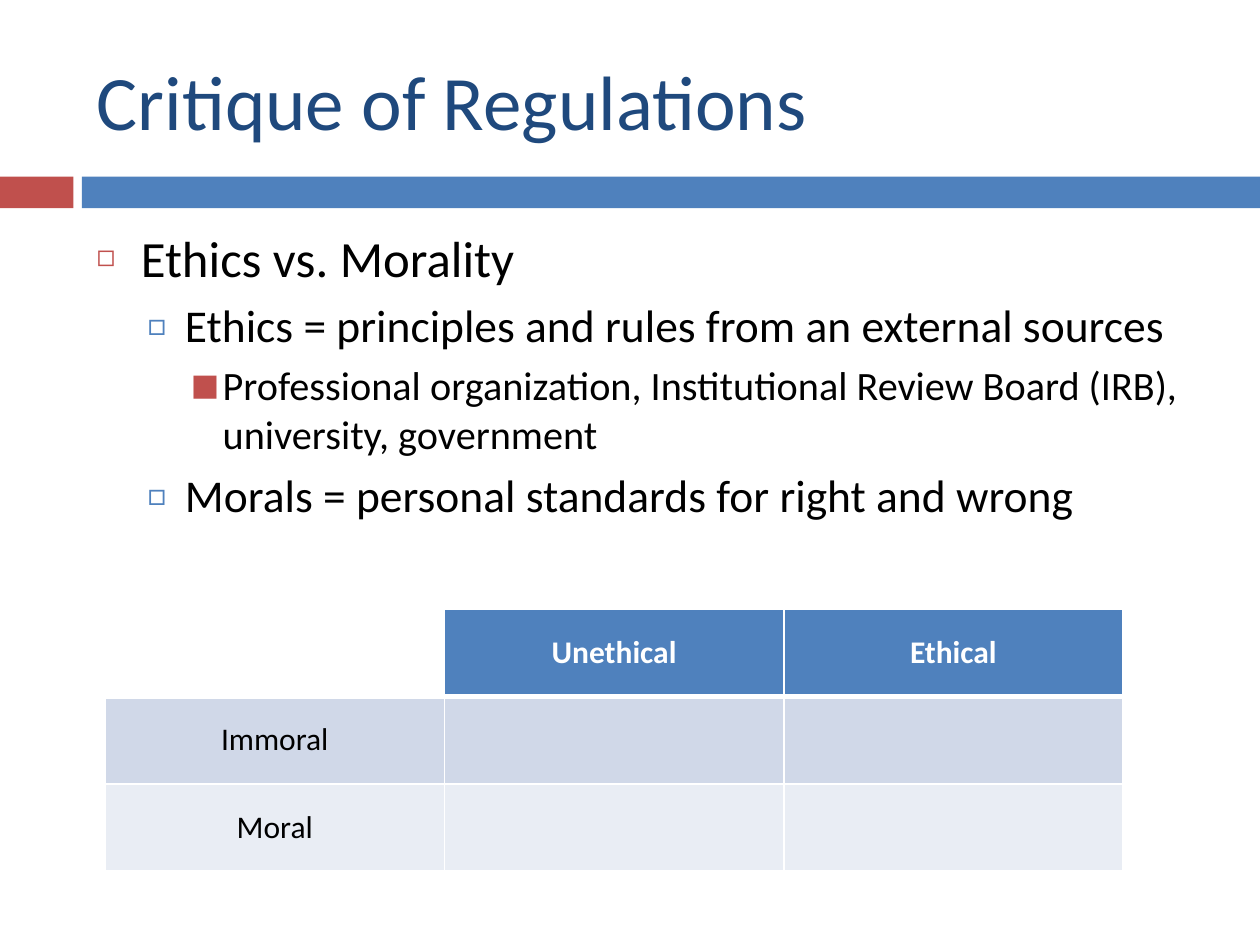
from lxml import etree
from pptx import Presentation
from pptx import util as u
from pptx.dml import color
from pptx.enum import shapes, text
from pptx.oxml import ns

FONT = "Calibri"
RED, BLUE, NAVY, BLACK, WHITE = "C0504D", "4F81BD", "1F497D", "000000", "FFFFFF"
LEVELS = [
    dict(size=29, left=0.89, hanging=0.89, before=7, bullet="◻", tint=RED, percent=60),
    dict(size=26, left=1.78, hanging=0.76, before=5.5, bullet="□", tint=BLUE, percent=70),
    dict(size=23, left=2.54, hanging=0.64, before=5, bullet="■", tint=RED, percent=75),
]
OUTLINE = [
    (0, "Ethics vs. Morality"),
    (1, "Ethics = principles and rules from an external sources"),
    (2, "Professional organization, Institutional Review Board (IRB), university, government"),
    (1, "Morals = personal standards for right and wrong"),
]
ROWS = [["", "Unethical", "Ethical"], ["Immoral", "", ""], ["Moral", "", ""]]
ROW_FILLS = [BLUE, "D0D8E8", "E9EDF4"]


def rgb(value):
    """Turn a hex string into a colour."""
    return color.RGBColor.from_string(value)


def add_element(parent, tag, **attributes):
    """Append a drawing element to a parent and return it."""
    element = etree.SubElement(parent, ns.qn("a:" + tag))
    for name, value in attributes.items():
        element.set(name, str(value))
    return element


def add_run(paragraph, content, size, tint, bold=False):
    """Add one formatted run to a paragraph."""
    run = paragraph.add_run()
    run.text = content
    run.font.name = FONT
    run.font.size = u.Pt(size)
    run.font.bold = bold
    run.font.color.rgb = rgb(tint)


def add_bar(slide, left, width, fill):
    """Add a plain block of the band under the title."""
    bar = slide.shapes.add_shape(
        shapes.MSO_SHAPE.RECTANGLE, u.Cm(left), u.Cm(3.56), u.Cm(width), u.Cm(0.64))
    bar.shadow.inherit = False
    bar.fill.solid()
    bar.fill.fore_color.rgb = rgb(fill)
    bar.line.fill.background()


def add_text_frame(slide, top, height, anchor):
    """Add a wrapping text box in the main column and return its frame."""
    box = slide.shapes.add_textbox(u.Cm(1.7), u.Cm(top), u.Cm(22.66), u.Cm(height))
    frame = box.text_frame
    frame.word_wrap = True
    frame.vertical_anchor = anchor
    return frame


def add_bullet(paragraph, style):
    """Give a paragraph the indent, spacing and bullet of its level."""
    paragraph.space_before = u.Pt(style["before"])
    properties = paragraph._p.get_or_add_pPr()
    properties.set("marL", str(u.Cm(style["left"])))
    properties.set("indent", str(-u.Cm(style["hanging"])))
    add_element(add_element(properties, "buClr"), "srgbClr", val=style["tint"])
    add_element(properties, "buSzPct", val=style["percent"] * 1000)
    add_element(properties, "buFont", typeface=FONT)
    add_element(properties, "buChar", char=style["bullet"])


def add_outline(slide):
    """Add the bulleted outline."""
    frame = add_text_frame(slide, 4.45, 6.78, text.MSO_ANCHOR.TOP)
    for index, (level, content) in enumerate(OUTLINE):
        paragraph = frame.add_paragraph() if index else frame.paragraphs[0]
        paragraph.level = level
        add_bullet(paragraph, LEVELS[level])
        add_run(paragraph, content, LEVELS[level]["size"], BLACK)


def format_cell(cell, fill, bottom_width):
    """Set the white borders, the fill and the anchor of a cell."""
    properties = cell._tc.get_or_add_tcPr()
    for side in "LRTB":
        width = bottom_width if side == "B" else 1
        line = add_element(properties, "ln" + side, w=u.Pt(width))
        add_element(add_element(line, "solidFill"), "srgbClr", val=WHITE)
    cell.fill.solid()
    cell.fill.fore_color.rgb = rgb(fill)
    cell.vertical_anchor = text.MSO_ANCHOR.MIDDLE


def add_matrix(slide):
    """Add the table that crosses ethics with morality."""
    table = slide.shapes.add_table(
        3, 3, u.Cm(2.12), u.Cm(12.28), u.Cm(20.52), u.Cm(5.28)).table
    table.horz_banding = False
    for row, contents in enumerate(ROWS):
        header = row == 0
        for column, content in enumerate(contents):
            cell = table.cell(row, column)
            corner = header and column == 0
            format_cell(cell, WHITE if corner else ROW_FILLS[row], 3 if header else 1)
            if content:
                paragraph = cell.text_frame.paragraphs[0]
                paragraph.alignment = text.PP_ALIGN.CENTER
                add_run(paragraph, content, 18, WHITE if header else BLACK, header)


def main():
    """Build the slide and save it."""
    presentation = Presentation()
    presentation.slide_width, presentation.slide_height = u.Cm(25.4), u.Cm(19.05)
    slide = presentation.slides.add_slide(presentation.slide_layouts[6])
    add_bar(slide, 0, 1.48, RED)
    add_bar(slide, 1.65, 23.75, BLUE)
    title = add_text_frame(slide, 0.64, 2.74, text.MSO_ANCHOR.MIDDLE)
    add_run(title.paragraphs[0], "Critique of Regulations", 44, NAVY)
    add_outline(slide)
    add_matrix(slide)
    presentation.save("out.pptx")


if __name__ == "__main__":
    main()
